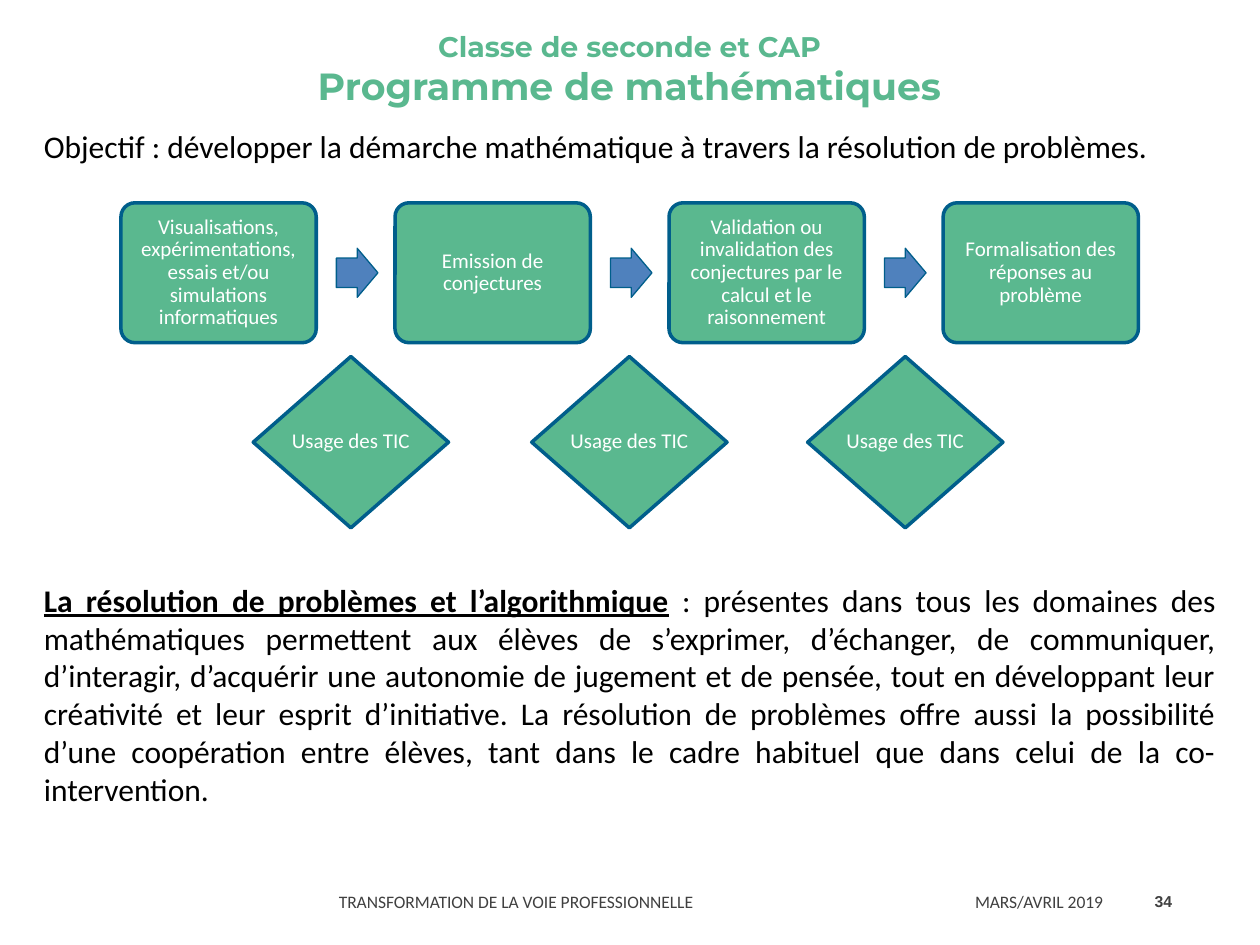
from typing import NamedTuple

import pptx
import pptx.dml.color
import pptx.enum.shapes
import pptx.enum.text
import pptx.util

Inches = pptx.util.Inches
Pt = pptx.util.Pt
SHAPE = pptx.enum.shapes.MSO_SHAPE
ALIGN = pptx.enum.text.PP_ALIGN
ANCHOR = pptx.enum.text.MSO_ANCHOR

COLORS = {
    "green": "5AB88F",
    "border": "005E8B",
    "arrow": "4F81BD",
    "white": "FFFFFF",
    "black": "000000",
    "footer": "404040",
}


class Box(NamedTuple):
    left: float
    top: float
    width: float
    height: float


class Run(NamedTuple):
    text: str
    size: float
    emphasis: bool = False


class Style(NamedTuple):
    font: str = "Calibri"
    color: str = "black"
    align: ALIGN = ALIGN.LEFT
    anchor: ANCHOR = ANCHOR.TOP
    bold: bool = False
    spacing: object = None


def rgb(name: str) -> pptx.dml.color.RGBColor:
    return pptx.dml.color.RGBColor.from_string(COLORS[name])


def style_paragraph(p, style: Style) -> None:
    p.alignment = style.align
    p.line_spacing = style.spacing
    p.font.name = style.font
    p.font.bold = style.bold
    p.font.color.rgb = rgb(style.color)


def add_text(s, box: Box, runs: list[Run], style: Style, breaks: bool = False) -> None:
    """Add a one-paragraph text box, optionally with one run per line."""
    tf = s.shapes.add_textbox(*map(Inches, box)).text_frame
    tf.word_wrap = True
    tf.vertical_anchor = style.anchor
    p = tf.paragraphs[0]
    style_paragraph(p, style)
    for i, run in enumerate(runs):
        if breaks and i:
            p.add_line_break()
        r = p.add_run()
        r.text = run.text
        r.font.size = Pt(run.size)
        if run.emphasis:
            r.font.bold = r.font.underline = True


def add_shape(s, kind: SHAPE, box: Box, fill: str, line_width: float, adjustments=()):
    sp = s.shapes.add_shape(kind, *map(Inches, box))
    sp.shadow.inherit = False
    sp.fill.solid()
    sp.fill.fore_color.rgb = rgb(fill)
    sp.line.color.rgb = rgb("border")
    sp.line.width = Pt(line_width)
    for i, value in enumerate(adjustments):
        sp.adjustments[i] = value
    return sp


def label(sp, text: str, wrap: bool) -> None:
    tf = sp.text_frame
    tf.word_wrap = wrap
    tf.vertical_anchor = ANCHOR.MIDDLE
    tf.margin_left = tf.margin_right = tf.margin_top = tf.margin_bottom = Inches(0.05)
    p = tf.paragraphs[0]
    p.text = text
    style_paragraph(p, Style(color="white", align=ALIGN.CENTER, spacing=0.9))
    p.font.size = Pt(12)
    p.space_after = Pt(4.2)


STEPS = [
    "Visualisations, expérimentations, essais et/ou simulations informatiques",
    "Emission de conjectures",
    "Validation ou invalidation des conjectures par le calcul et le raisonnement",
    "Formalisation des réponses au problème",
]
STEP_LEFT, STEP_PITCH, STEP_WIDTH = 0.96, 2.175, 1.55
ARROW_OFFSET = 1.71
DIAMOND_LEFTS = [2.01, 4.22, 6.41]

prs = pptx.Presentation()
prs.slide_width, prs.slide_height = Inches(10), Inches(7.5)
s = prs.slides.add_slide(prs.slide_layouts[6])

# Title
add_text(
    s,
    Box(0.24, 0.15, 9.51, 0.79),
    [Run("Classe de seconde et CAP", 16.2), Run("Programme de mathématiques", 21.6)],
    Style("Montserrat", "green", ALIGN.CENTER, ANCHOR.MIDDLE, True),
    breaks=True,
)

# Objective and closing paragraph
add_text(
    s,
    Box(0.25, 0.96, 9.5, 0.4),
    [Run("Objectif : développer la démarche mathématique à travers la résolution de problèmes.", 18)],
    Style(),
)
add_text(
    s,
    Box(0.25, 4.56, 9.5, 1.95),
    [
        Run("La résolution de problèmes et l’algorithmique", 18, True),
        Run(
            " : présentes dans tous les domaines des mathématiques permettent aux élèves "
            "de s’exprimer, d’échanger, de communiquer, d’interagir, d’acquérir une autonomie "
            "de jugement et de pensée, tout en développant leur créativité et leur esprit "
            "d’initiative. La résolution de problèmes offre aussi la possibilité d’une "
            "coopération entre élèves, tant dans le cadre habituel que dans celui de la "
            "co-intervention.",
            18,
        ),
    ],
    Style(align=ALIGN.JUSTIFY),
)

# Process steps with arrows between them
for i, step in enumerate(STEPS):
    left = STEP_LEFT + i * STEP_PITCH
    sp = add_shape(s, SHAPE.ROUNDED_RECTANGLE, Box(left, 1.61, STEP_WIDTH, 1.11), "green", 2, [0.1])
    label(sp, step, wrap=True)
    if i < len(STEPS) - 1:
        arrow_box = Box(left + ARROW_OFFSET, 1.97, 0.33, 0.39)
        add_shape(s, SHAPE.RIGHT_ARROW, arrow_box, "arrow", 0.75, [0.6, 0.5])

# Diamonds under the steps
for left in DIAMOND_LEFTS:
    sp = add_shape(s, SHAPE.DIAMOND, Box(left, 2.83, STEP_WIDTH, 1.36), "green", 2)
    label(sp, "Usage des TIC", wrap=False)

# Footer
footer = Style(color="footer", anchor=ANCHOR.MIDDLE, spacing=Pt(13.2))
add_text(s, Box(2.59, 6.94, 5.05, 0.42), [Run("TRANSFORMATION DE LA VOIE PROFESSIONNELLE", 10)], footer)
add_text(s, Box(7.64, 6.95, 1.27, 0.4), [Run("MARS/AVRIL 2019", 10)], footer)
add_text(
    s,
    Box(8.91, 6.95, 0.49, 0.4),
    [Run("34", 9)],
    Style("Arial", "footer", ALIGN.RIGHT, ANCHOR.MIDDLE, True),
)

prs.save("out.pptx")
